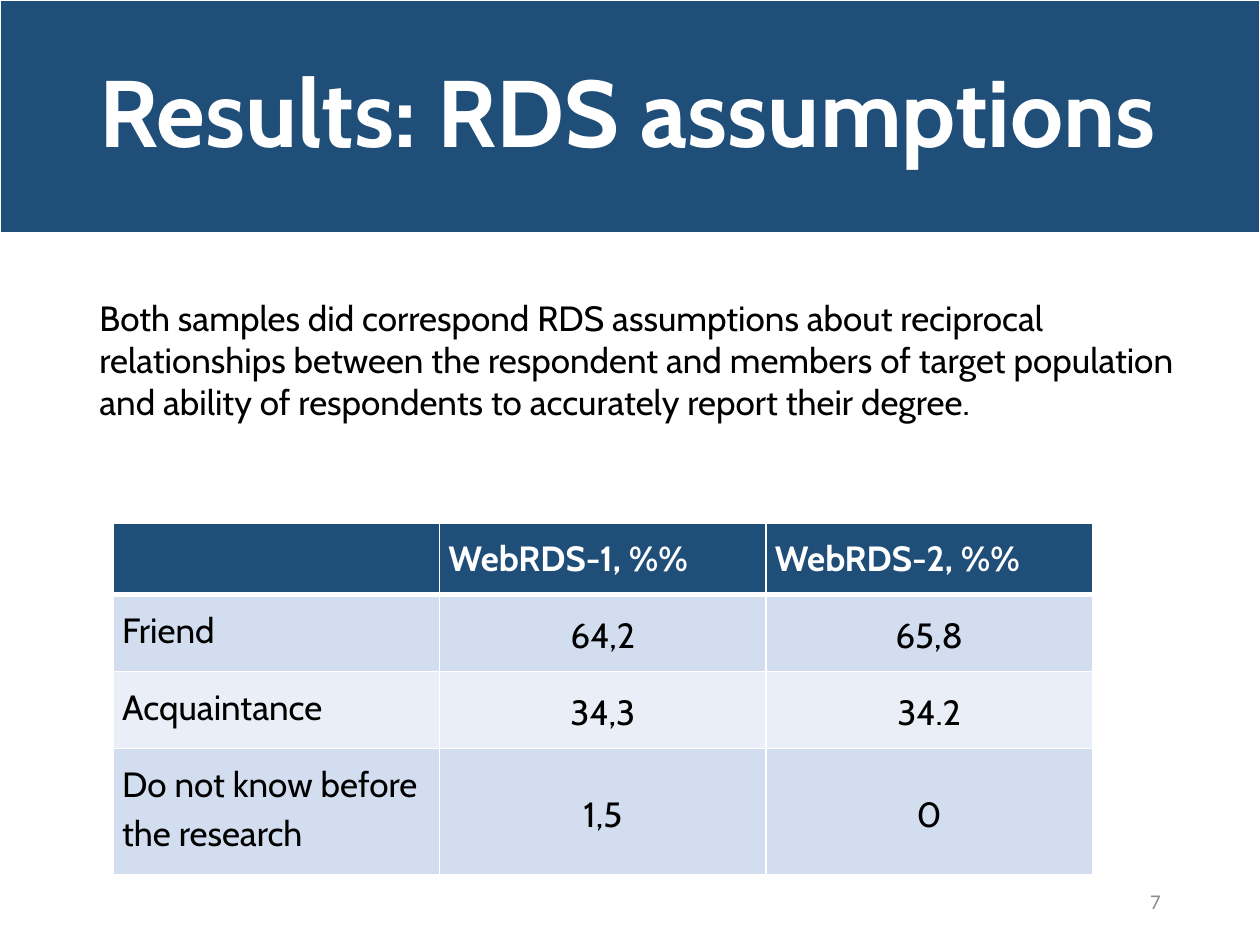
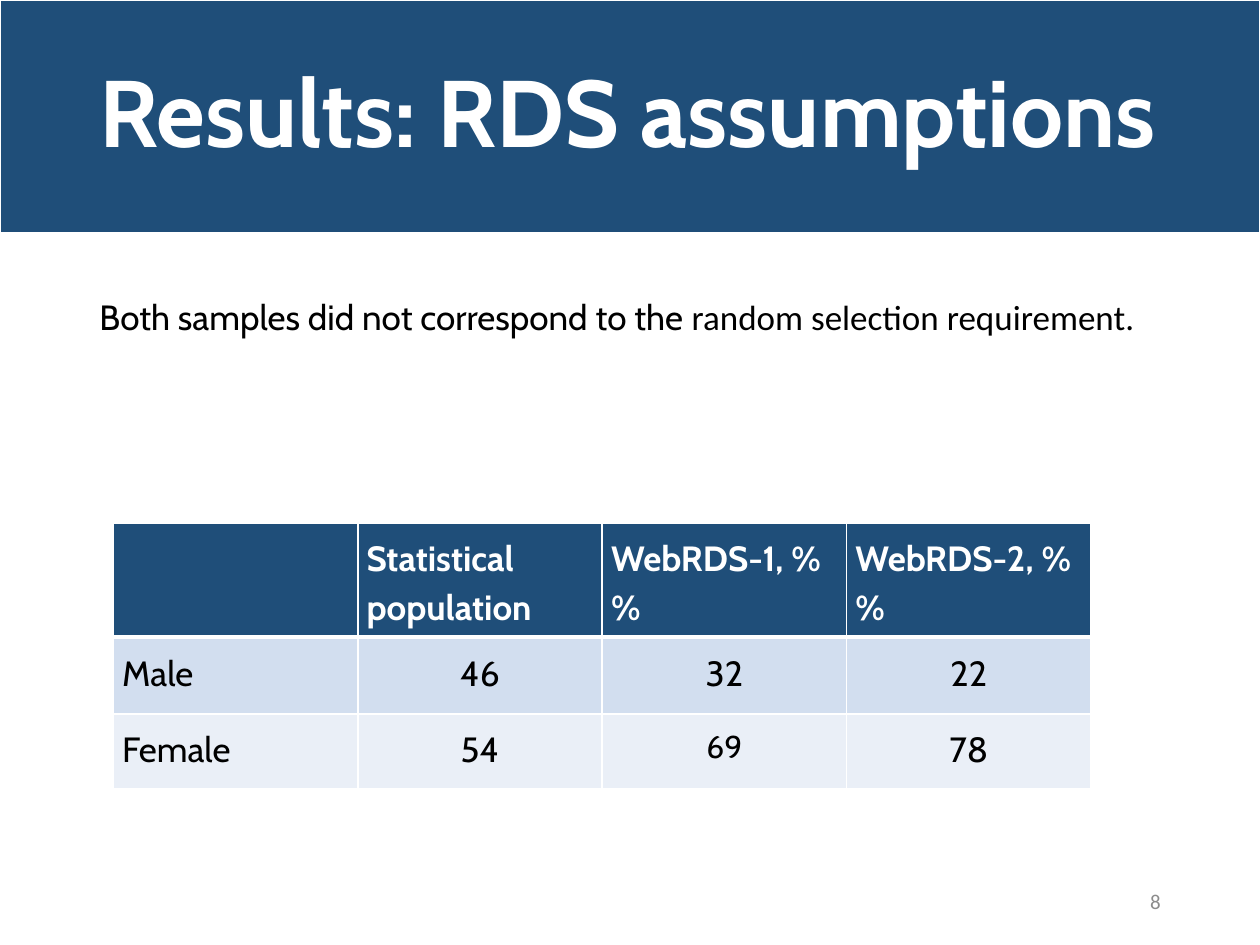
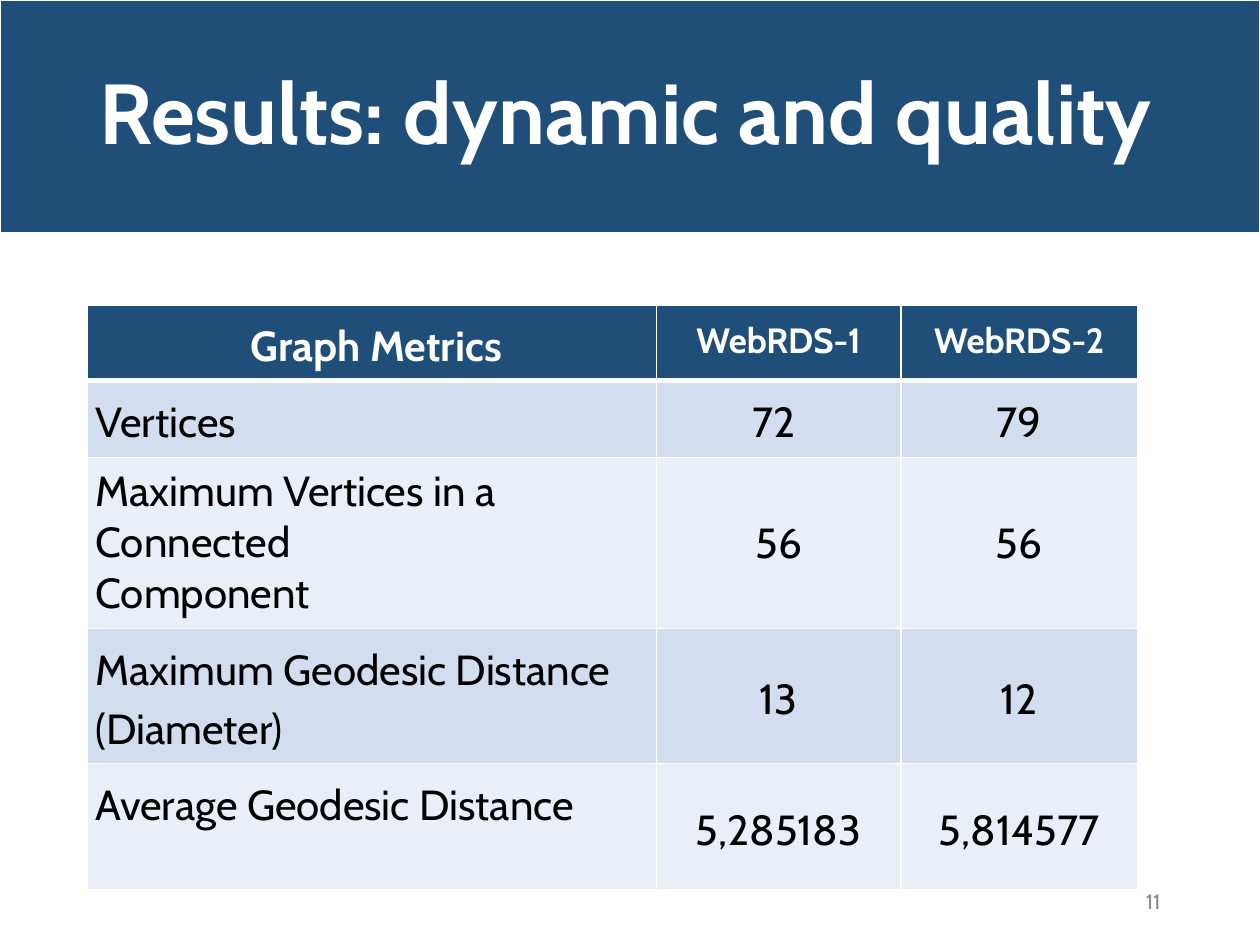
from lxml import etree
from pptx import Presentation
from pptx.dml.color import RGBColor
from pptx.enum.shapes import MSO_SHAPE
from pptx.enum.text import MSO_ANCHOR, PP_ALIGN
from pptx.oxml.ns import qn
from pptx.util import Inches, Pt

RECTANGLE = MSO_SHAPE.RECTANGLE
TOP, MIDDLE = MSO_ANCHOR.TOP, MSO_ANCHOR.MIDDLE
LEFT, CENTER, RIGHT = PP_ALIGN.LEFT, PP_ALIGN.CENTER, PP_ALIGN.RIGHT

COLORS = {
    "navy": "1F4E79",
    "white": "FFFFFF",
    "black": "000000",
    "gray": "8C8C8C",
    "odd_row": "D2DEEF",
    "even_row": "EAEFF7",
}
FONT, SECOND_FONT = "Cabin", "Calibri"
CELL_MARGIN = Inches(0.07)

PAGES = [
    {
        "title": "Results: RDS assumptions", "title_size": 54,
        "number": "7", "number_font": SECOND_FONT,
        "body": [("Both samples did correspond RDS assumptions about reciprocal "
                  "relationships between the respondent and members of target population "
                  "and ability of respondents to accurately report their degree.", FONT)],
        "body_height": 1.45,
        "table_at": (0.9, 4.15),
        "columns": [2.59] * 3,
        "heights": [0.57, 0.61, 0.61, 1],
        "rows": [
            ["", "WebRDS-1, %%", "WebRDS-2, %%"],
            ["Friend", "64,2", "65,8"],
            ["Acquaintance", "34,3", "34.2"],
            ["Do not know before the research", "1,5", "0"],
        ],
        "text_size": 20, "special_sizes": {},
        "header_align": LEFT, "value_anchor": MIDDLE,
    },
    {
        "title": "Results: RDS assumptions", "title_size": 54,
        "number": "8", "number_font": SECOND_FONT,
        "body": [("Both samples did not correspond to the ", FONT),
                 ("random selection requirement.", SECOND_FONT)],
        "body_height": 0.44,
        "table_at": (0.9, 4.15),
        "columns": [1.94] * 4,
        "heights": [0.9, 0.61, 0.59],
        "rows": [
            ["", "Statistical population", "WebRDS-1, %%", "WebRDS-2, %%"],
            ["Male", "46", "32", "22"],
            ["Female", "54", "69", "78"],
        ],
        "text_size": 20, "special_sizes": {"69": 18},
        "header_align": LEFT, "value_anchor": TOP,
    },
    {
        "title": "Results: dynamic and quality", "title_size": 48.6,
        "number": "11", "number_font": FONT,
        "body": [],
        "table_at": (0.69, 2.42),
        "columns": [4.52, 1.94, 1.88],
        "heights": [0.59, 0.61, 1.36, 1.07, 1],
        "rows": [
            [" Graph Metrics", "WebRDS-1", "WebRDS-2"],
            ["Vertices", "72 ", "79"],
            ["Maximum Vertices in a Connected\nComponent", "56", "56"],
            ["Maximum Geodesic Distance (Diameter)", "13", "12"],
            ["Average Geodesic Distance", "5,285183", "5,814577"],
        ],
        "text_size": 24, "special_sizes": {"WebRDS-1": 20, "WebRDS-2": 20},
        "header_align": CENTER, "value_anchor": MIDDLE,
    },
]


def add_text(page, at, spans, size, color, bold=False, align=LEFT, anchor=TOP, spacing=1.0):
    box = page.shapes.add_textbox(*[Inches(length) for length in at])
    frame = box.text_frame
    frame.word_wrap = True
    frame.vertical_anchor = anchor
    para = frame.paragraphs[0]
    para.alignment = align
    para.line_spacing = spacing
    for text, font in spans:
        span = para.add_run()
        span.text = text
        span.font.name = font
        span.font.size = Pt(size)
        span.font.bold = bold
        span.font.color.rgb = RGBColor.from_string(COLORS[color])


def add_borders(cell, widths):
    properties = cell._tc.get_or_add_tcPr()
    for position, (side, width) in enumerate(widths.items()):
        line = etree.Element(qn(f"a:ln{side}"), w=str(Pt(width)))
        fill = etree.SubElement(line, qn("a:solidFill"))
        etree.SubElement(fill, qn("a:srgbClr"), val=COLORS["white"])
        properties.insert(position, line)


deck = Presentation()
deck.slide_width = Inches(10)
deck.slide_height = Inches(7.5)

for content in PAGES:
    page = deck.slides.add_slide(deck.slide_layouts[6])

    band = page.shapes.add_shape(RECTANGLE, 0, 0, deck.slide_width, Inches(1.85))
    band.shadow.inherit = False
    band.fill.solid()
    band.fill.fore_color.rgb = RGBColor.from_string(COLORS["navy"])
    band.line.color.rgb = RGBColor.from_string(COLORS["white"])
    band.line.width = Pt(1)

    add_text(page, (0.69, 0.2, 8.62, 1.45), [(content["title"], FONT)],
             content["title_size"], "white", bold=True, anchor=MIDDLE, spacing=0.9)
    add_text(page, (7.06, 6.95, 2.25, 0.4), [(content["number"], content["number_font"])],
             12, "gray", align=RIGHT, anchor=MIDDLE)
    if content["body"]:
        add_text(page, (0.69, 2.3, 8.88, content["body_height"]), content["body"], 20, "black")

    rows, columns, heights = content["rows"], content["columns"], content["heights"]
    left, top = content["table_at"]
    table = page.shapes.add_table(len(rows), len(columns), Inches(left), Inches(top),
                                  Inches(sum(columns)), Inches(sum(heights))).table
    table.horz_banding = False
    for column, width in zip(table.columns, columns):
        column.width = Inches(width)

    for row_index, (labels, height) in enumerate(zip(rows, heights)):
        table.rows[row_index].height = Inches(height)
        is_header = row_index == 0
        row_fill = "navy" if is_header else "odd_row" if row_index % 2 else "even_row"
        spacing = 1.0 if "\n" in labels[0] else 1.15
        for column_index, label in enumerate(labels):
            is_value = column_index > 0 and not is_header
            cell = table.cell(row_index, column_index)
            cell.margin_left = cell.margin_right = CELL_MARGIN
            cell.margin_top = cell.margin_bottom = CELL_MARGIN
            cell.vertical_anchor = content["value_anchor"] if is_value else TOP
            cell.fill.solid()
            cell.fill.fore_color.rgb = RGBColor.from_string(COLORS[row_fill])
            add_borders(cell, {"L": 1, "R": 1, "T": 3 if row_index == 1 else 1,
                               "B": 3 if is_header else 1})
            cell.text_frame.text = label
            for para in cell.text_frame.paragraphs:
                para.alignment = content["header_align"] if is_header else CENTER if is_value else LEFT
                para.line_spacing = spacing
                for span in para.runs:
                    span.font.name = FONT
                    span.font.size = Pt(content["special_sizes"].get(label, content["text_size"]))
                    span.font.bold = is_header
                    span.font.color.rgb = RGBColor.from_string(COLORS["white" if is_header else "black"])

deck.save("out.pptx")
